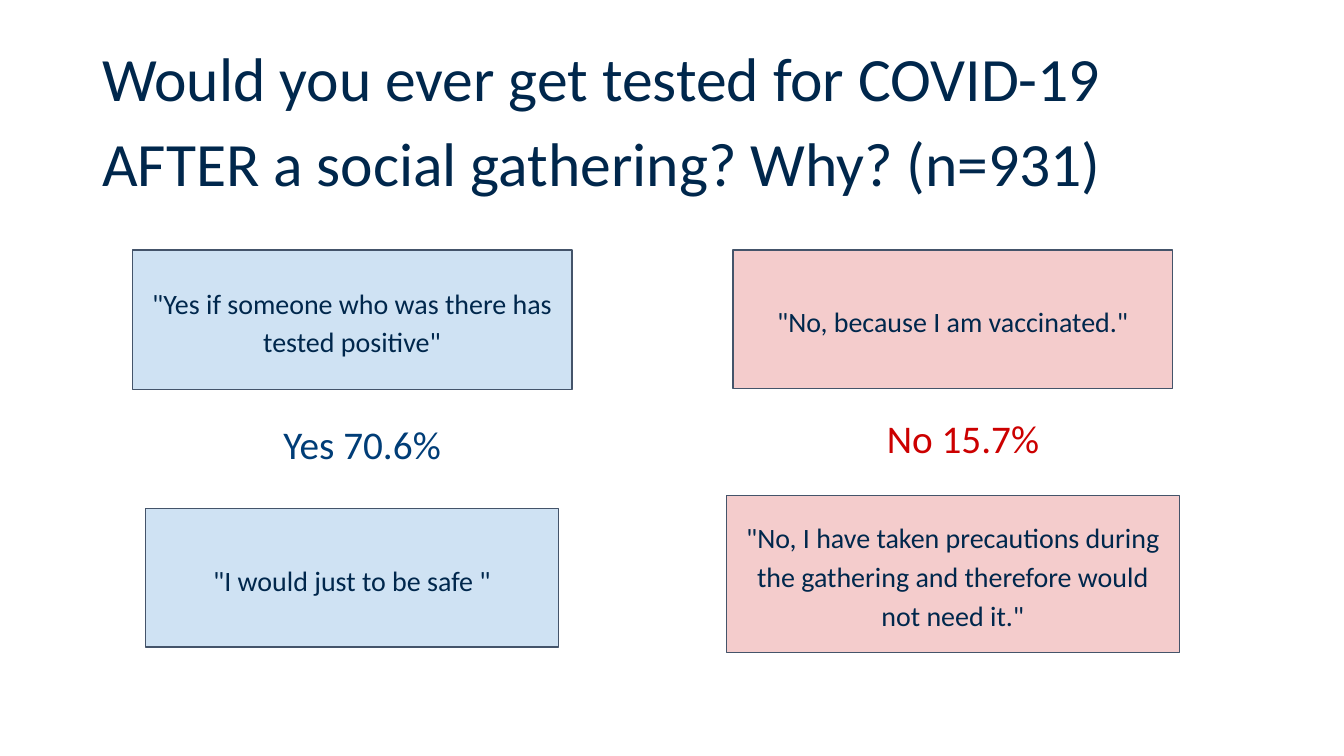
import pptx
import pptx.dml.color
import pptx.enum.shapes
import pptx.enum.text
import pptx.oxml.ns
import pptx.util

SCALE = 4572  # 200 px to the inch
NAVY = "00274C"
EDGE = "44546A"
ALIGN = pptx.enum.text.PP_ALIGN
ANCHOR = pptx.enum.text.MSO_ANCHOR


def px(n):
    return pptx.util.Emu(n * SCALE)


def color(code):
    return pptx.dml.color.RGBColor.from_string(code)


def place(shape, box):
    shape.left, shape.top, shape.width, shape.height = map(px, box)


def write(shape, text, size=15, ink=NAVY, align=ALIGN.CENTER,
          anchor=ANCHOR.MIDDLE, space=1.15, inset=(20, 20), indent=None):
    frame = shape.text_frame
    frame.word_wrap = True
    frame.auto_size = pptx.enum.text.MSO_AUTO_SIZE.NONE
    frame.vertical_anchor = anchor
    frame.margin_left = frame.margin_right = px(inset[0])
    frame.margin_top = frame.margin_bottom = px(inset[1])
    frame.text = text
    para = frame.paragraphs[0]
    para.alignment = align
    para.line_spacing = space
    para.space_before = pptx.util.Pt(0)
    if indent:
        props = para._p.get_or_add_pPr()
        props.set("marL", str(px(indent[0])))
        props.set("indent", str(px(indent[1])))
        props.append(pptx.oxml.parse_xml(
            "<a:buNone %s/>" % pptx.oxml.ns.nsdecls("a")))
    font = para.runs[0].font
    font.name = "Calibri"
    font.size = pptx.util.Pt(size)
    font.color.rgb = color(ink)


def heading(slide, box, text):
    title = slide.shapes.title
    place(title, box)
    write(title, text, size=33, align=ALIGN.LEFT, inset=(14, 7))


def quote(slide, box, text, fill, tip):
    kind = pptx.enum.shapes.MSO_SHAPE.ROUNDED_RECTANGULAR_CALLOUT
    shape = slide.shapes.add_shape(kind, *map(px, box))
    shape.shadow.inherit = False
    shape.fill.solid()
    shape.fill.fore_color.rgb = color(fill)
    shape.line.color.rgb = color(EDGE)
    shape.line.width = pptx.util.Pt(0.75)
    for i, value in enumerate((*tip, 0)):
        shape.adjustments[i] = value
    write(shape, text)


def column(slide, box, label, share, ink, fill, quotes):
    """Centre the quotes and the share label in the box."""
    left, top, width, _ = box

    def center(drop, wide, high):
        return left + (width - wide) // 2, top + drop, wide, high

    # Share of answers
    drop, wide, text = share
    place(label, center(drop, wide, 82))
    write(label, text, size=21, ink=ink, anchor=ANCHOR.TOP, space=0.9,
          inset=(14, 7), indent=(38, -8))

    # Quotes above and below the share
    for drop, wide, high, tip, text in quotes:
        quote(slide, center(drop, wide, high), text, fill, tip)


def main():
    deck = pptx.Presentation()
    deck.slide_width, deck.slide_height = px(2000), px(1125)
    slide = deck.slides.add_slide(deck.slide_layouts[3])
    marks = slide.placeholders

    heading(slide, (138, 60, 1724, 218),
            "Would you ever get tested for COVID-19 "
            "AFTER a social gathering? Why? (n=931)")

    # Yes answers
    column(slide, (197, 372, 654, 592), marks[1],
           (255, 382, "Yes 70.6%"), "003D77", "CFE2F3", [
               (0, 654, 208, (-0.5, -0.27),
                '"Yes if someone who was there has tested positive"'),
               (385, 614, 206, (-0.17, -0.5),
                '"I would just to be safe "')])

    # No answers
    column(slide, (1081, 372, 674, 600), marks[2],
           (245, 388, "No 15.7%"), "CC0000", "F4CCCC", [
               (0, 654, 206, (0.2, -0.5),
                '"No, because I am vaccinated."'),
               (365, 674, 234, (-0.21, -0.5),
                '"No, I have taken precautions during the gathering '
                'and therefore would not need it."')])

    deck.save("out.pptx")


if __name__ == "__main__":
    main()
